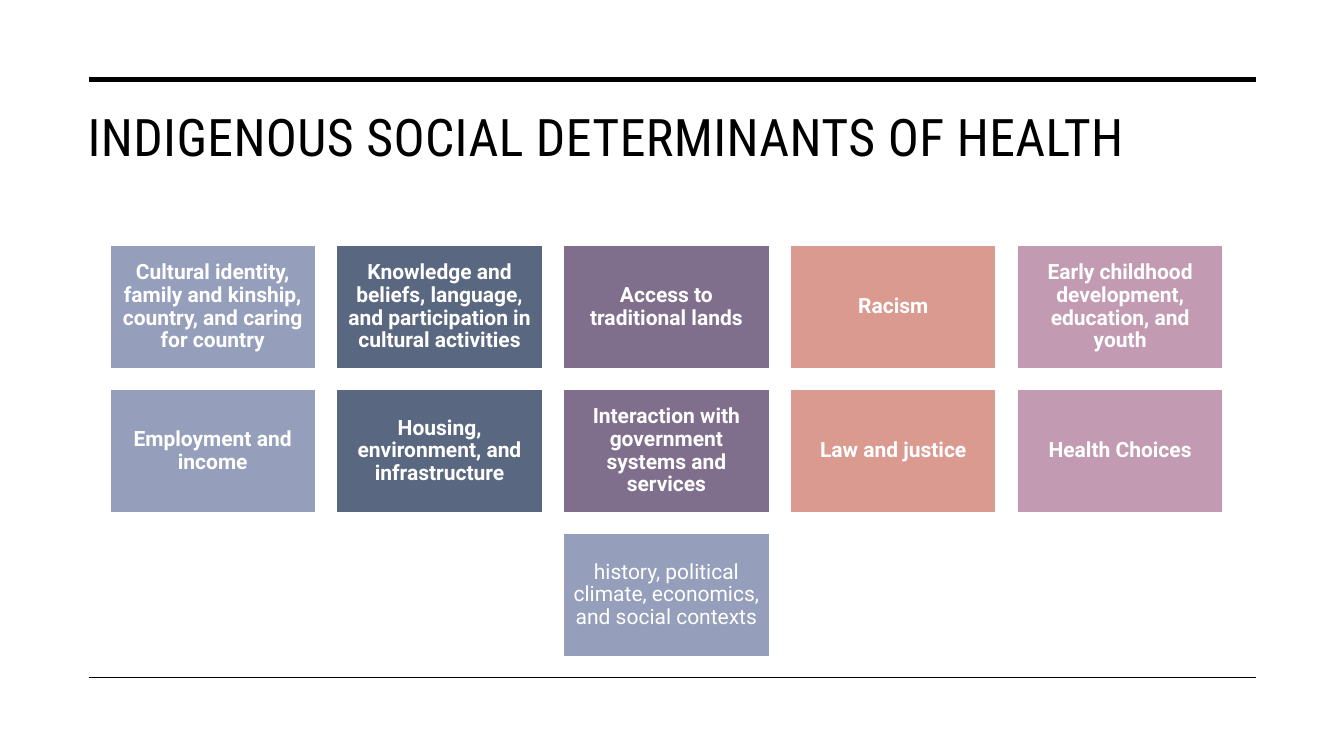
from dataclasses import dataclass

from pptx import Presentation
from pptx.dml.color import RGBColor
from pptx.enum.shapes import MSO_CONNECTOR, MSO_SHAPE
from pptx.enum.text import MSO_ANCHOR, PP_ALIGN
from pptx.oxml.ns import qn
from pptx.slide import Slide
from pptx.util import Inches, Pt

BLACK = RGBColor(0x00, 0x00, 0x00)
WHITE = RGBColor(0xFF, 0xFF, 0xFF)
PERIWINKLE = RGBColor(0x95, 0x9E, 0xBB)
SLATE = RGBColor(0x59, 0x67, 0x81)
PLUM = RGBColor(0x7F, 0x6E, 0x8C)
CORAL = RGBColor(0xDB, 0x9A, 0x8F)
MAUVE = RGBColor(0xC2, 0x9A, 0xB1)
COLUMN_COLORS = (PERIWINKLE, SLATE, PLUM, CORAL, MAUVE)

GRID_LEFT, GRID_TOP = 1.09, 2.43
TILE_WIDTH, TILE_HEIGHT = 2.04, 1.23
COLUMN_STEP, ROW_STEP = 2.25, 1.43

TITLE_FONT = {"name": "Roboto Condensed", "size": Pt(37)}
TILE_FONT = {"name": "Roboto", "size": Pt(15)}
TILE_FRAME = {
    "word_wrap": True,
    "vertical_anchor": MSO_ANCHOR.MIDDLE,
    "margin_left": Inches(0.06),
    "margin_right": Inches(0.06),
    "margin_top": Inches(0.06),
    "margin_bottom": Inches(0.06),
}
TILE_PARAGRAPH = {"alignment": PP_ALIGN.CENTER, "line_spacing": 0.9}


@dataclass(frozen=True)
class Rule:
    top: float
    weight: float


@dataclass(frozen=True)
class Tile:
    text: str
    column: int
    row: int
    color: RGBColor
    bold: bool = True


RULES = (Rule(0.79, 3.5), Rule(6.72, 1))

DETERMINANTS = (
    "Cultural identity, family and kinship, country, and caring for country",
    "Knowledge and beliefs, language, and participation in cultural activities",
    "Access to traditional lands",
    "Racism",
    "Early childhood development, education, and youth",
    "Employment and income",
    "Housing, environment, and infrastructure",
    "Interaction with government systems and services",
    "Law and justice",
    "Health Choices",
)
CONTEXT = Tile("history, political climate, economics, and social contexts",
               2, 2, PERIWINKLE, bold=False)


def apply_format(target: object, values: dict) -> None:
    for name, value in values.items():
        setattr(target, name, value)


def add_title(slide: Slide, text: str) -> None:
    box = slide.shapes.add_textbox(Inches(0.77), Inches(0.99), Inches(11.69), Inches(1.26))
    box.text_frame.word_wrap = True
    run = box.text_frame.paragraphs[0].add_run()
    run.text = text
    apply_format(run.font, TITLE_FONT)
    run.font.color.rgb = BLACK
    run.font._element.set("spc", "30")


def add_rule(slide: Slide, rule: Rule) -> None:
    line = slide.shapes.add_connector(MSO_CONNECTOR.STRAIGHT, Inches(0.88), Inches(rule.top),
                                      Inches(12.46), Inches(rule.top))
    line.line.color.rgb = BLACK
    line.line.width = Pt(rule.weight)
    properties = line._element.spPr
    properties.append(properties.makeelement(qn("a:effectLst"), {}))


def add_tile(slide: Slide, tile: Tile) -> None:
    shape = slide.shapes.add_shape(
        MSO_SHAPE.RECTANGLE,
        Inches(GRID_LEFT + tile.column * COLUMN_STEP),
        Inches(GRID_TOP + tile.row * ROW_STEP),
        Inches(TILE_WIDTH), Inches(TILE_HEIGHT))
    shape.shadow.inherit = False
    shape.fill.solid()
    shape.fill.fore_color.rgb = tile.color
    shape.line.color.rgb = WHITE
    shape.line.width = Pt(1)
    apply_format(shape.text_frame, TILE_FRAME)
    paragraph = shape.text_frame.paragraphs[0]
    apply_format(paragraph, TILE_PARAGRAPH)
    run = paragraph.add_run()
    run.text = tile.text
    apply_format(run.font, TILE_FONT | {"bold": tile.bold})
    run.font.color.rgb = WHITE


def main() -> None:
    presentation = Presentation()
    presentation.slide_width = Inches(13.33)
    presentation.slide_height = Inches(7.5)
    slide = presentation.slides.add_slide(presentation.slide_layouts[6])

    add_title(slide, "INDIGENOUS SOCIAL DETERMINANTS OF HEALTH")
    for rule in RULES:
        add_rule(slide, rule)
    for index, text in enumerate(DETERMINANTS):
        row, column = divmod(index, len(COLUMN_COLORS))
        add_tile(slide, Tile(text, column, row, COLUMN_COLORS[column]))
    add_tile(slide, CONTEXT)

    presentation.save("out.pptx")


if __name__ == "__main__":
    main()
